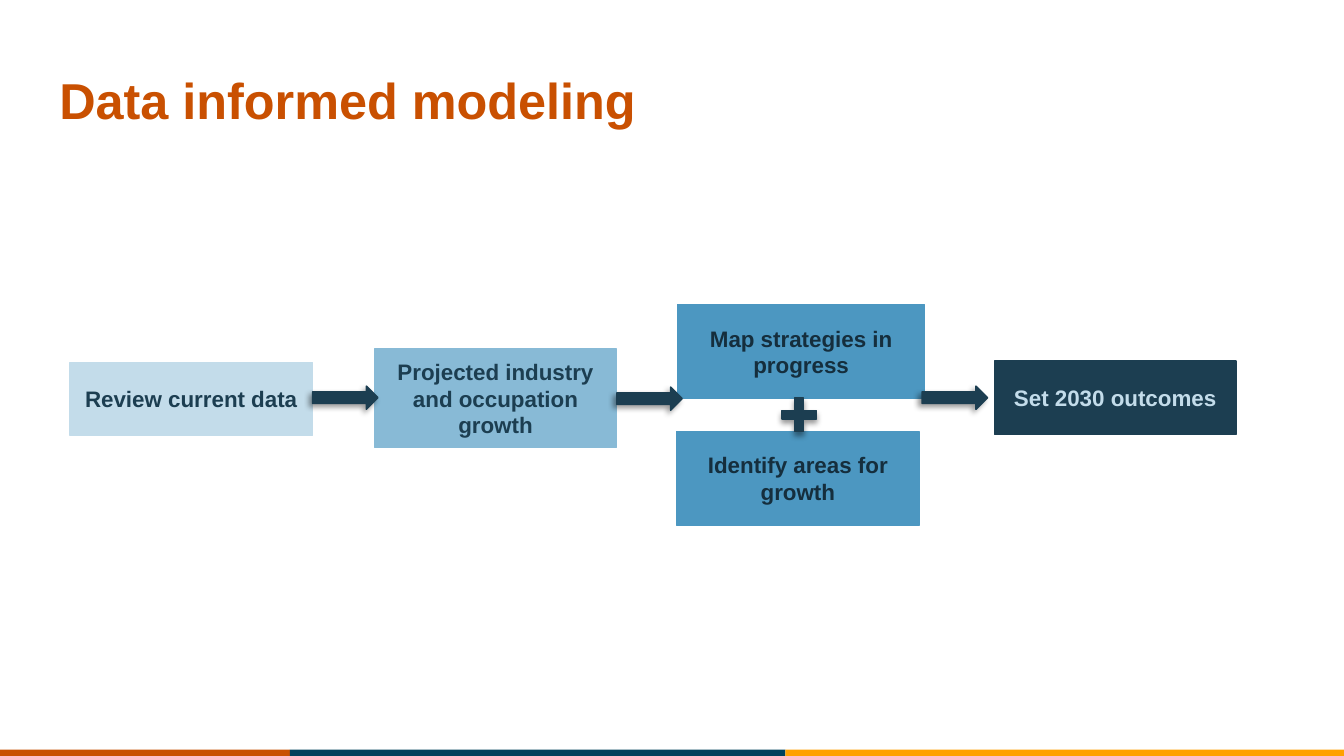
"""Build the "Data informed modeling" process slide."""
from pptx import Presentation
from pptx.dml.color import RGBColor
from pptx.enum.shapes import MSO_SHAPE as SHAPE
from pptx.enum.text import MSO_ANCHOR as ANCHOR, PP_ALIGN as ALIGN
from pptx.oxml import parse_xml
from pptx.oxml.ns import nsdecls, qn
from pptx.util import Pt

NAVY, ORANGE, PALE = "1C3E51", "C95001", "C3DCEA"
SKY, BLUE, INK = "88BAD6", "4C97C1", "152E3D"


def rgb(color):
    """Turn a hex string into a colour."""
    return RGBColor.from_string(color)


class Deck:
    """Hold the style and the current slide."""

    font = "Arial"

    def __init__(self, width, height):
        """Start a deck with one blank slide."""
        self.prs = Presentation()
        self.prs.slide_width, self.prs.slide_height = Pt(width), Pt(height)
        self.s = self.prs.slides.add_slide(self.prs.slide_layouts[6])

    def text(self, sp, text, size, color, align):
        """Write one bold paragraph, centred vertically."""
        tf = sp.text_frame
        for name, value in {"word_wrap": True, "vertical_anchor": ANCHOR.MIDDLE}.items():
            setattr(tf, name, value)
        p = tf.paragraphs[0]
        p.alignment = align
        r = p.add_run()
        r.text = text
        for name, value in {"name": self.font, "size": Pt(size), "bold": True}.items():
            setattr(r.font, name, value)
        r.font.color.rgb = rgb(color)
        return p

    def title(self, text, *box):
        """Add the slide title."""
        sp = self.s.shapes.add_textbox(*map(Pt, box))
        self.text(sp, text, 36, ORANGE, ALIGN.LEFT).line_spacing = 0.9

    def shape(self, kind, box, fill, outlined=True):
        """Add a flat filled shape."""
        sp = self.s.shapes.add_shape(kind, *map(Pt, box))
        sp.shadow.inherit = False
        sp.fill.solid()
        sp.fill.fore_color.rgb = rgb(fill)
        if outlined:
            sp.line.color.rgb = rgb(fill)
            sp.line.width = Pt(1)
        else:
            sp.line.fill.background()
        return sp

    def step(self, text, box, fill, color):
        """Add a labelled process box."""
        sp = self.shape(SHAPE.RECTANGLE, box, fill)
        self.text(sp, text, 16, color, ALIGN.CENTER)

    def sign(self, kind, box, angle):
        """Add a navy arrow or plus with a soft shadow."""
        sp = self.shape(kind, box, NAVY)
        sp._element.spPr.find(qn("a:effectLst")).append(parse_xml(
            f'<a:outerShdw {nsdecls("a")} blurRad="{Pt(4)}" dist="{Pt(3)}" '
            f'dir="{angle * 60000}" algn="tl" rotWithShape="0">'
            '<a:srgbClr val="000000"><a:alpha val="40000"/></a:srgbClr>'
            '</a:outerShdw>'))
        return sp


def main():
    """Draw the slide and save it."""
    deck = Deck(960, 540)
    edges = [0, 207, 561, 960]
    for left, right, fill in zip(edges, edges[1:], [ORANGE, "00425C", "FFA100"]):
        deck.shape(SHAPE.RECTANGLE, (left, 535.5, right - left, 4.5), fill, False)
    deck.title("Data informed modeling", 35.3, 29.5, 889, 87.8)

    for step in [
        ("Review current data", (50.1, 258.8, 173, 52.2), PALE, NAVY),
        ("Projected industry and occupation growth", (267.6, 249.2, 172.8, 70.4), SKY, NAVY),
        ("Map strategies in progress", (484, 217.6, 176.6, 67), BLUE, INK),
        ("Set 2030 outcomes", (710.2, 258, 172.8, 52.2), NAVY, PALE),
        ("Identify areas for growth", (483.3, 308.2, 173.3, 67), BLUE, INK),
    ]:
        deck.step(*step)

    plus = deck.sign(SHAPE.CROSS, (558.6, 284.2, 24.5, 24), 90)
    plus.adjustments[0] = 0.373
    for left, top in [(440.5, 276.5), (658.6, 275.8), (223.2, 275.8)]:
        deck.sign(SHAPE.RIGHT_ARROW, (left, top, 46.8, 16.6), 135)

    deck.prs.save("out.pptx")


if __name__ == "__main__":
    main()
